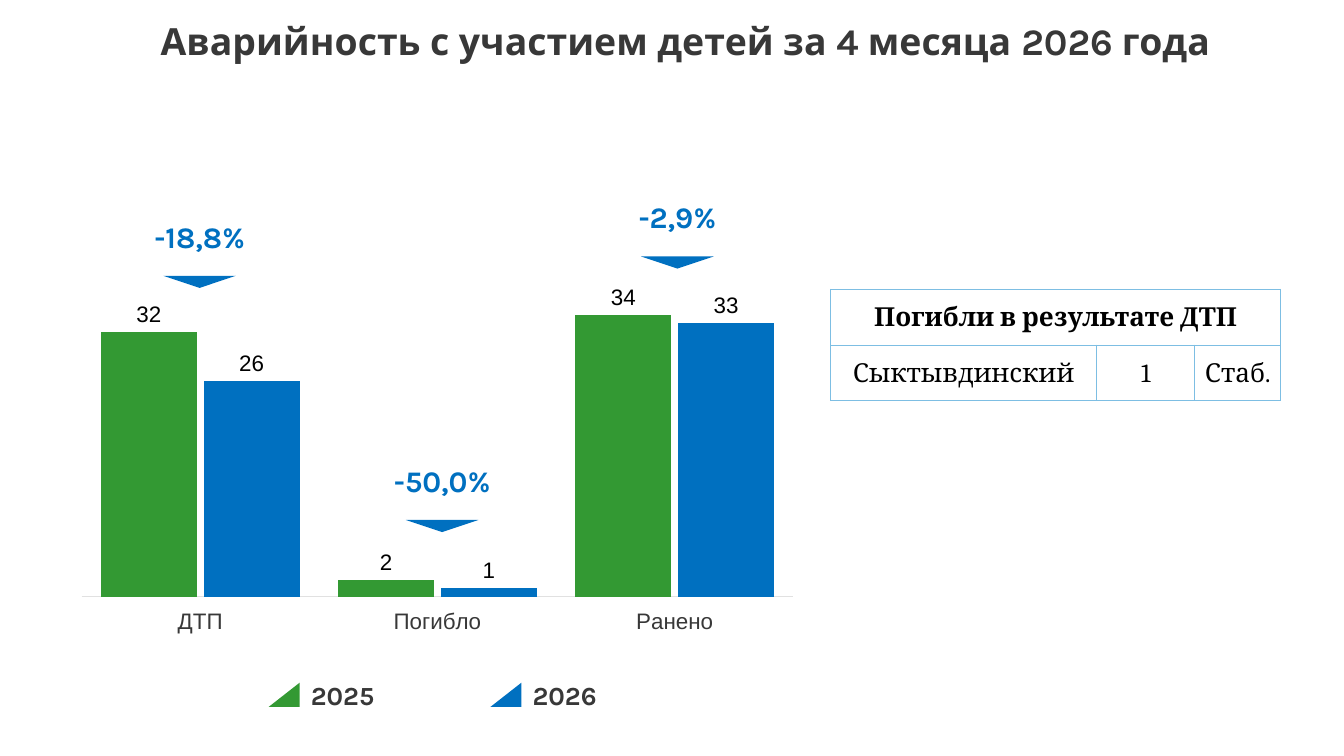
from pptx import Presentation
from pptx.chart.data import CategoryChartData
from pptx.dml.color import RGBColor
from pptx.enum.chart import XL_CHART_TYPE, XL_LABEL_POSITION, XL_TICK_LABEL_POSITION, XL_TICK_MARK
from pptx.enum.shapes import MSO_SHAPE
from pptx.enum.text import MSO_ANCHOR, PP_ALIGN
from pptx.oxml import parse_xml
from pptx.oxml.ns import nsdecls, qn
from pptx.util import Inches, Pt

WIDTH = Inches(10)
HEIGHT = WIDTH * 9 // 16
DARK = RGBColor(0x38, 0x38, 0x38)
GREEN = RGBColor(0x33, 0x99, 0x33)
BLUE = RGBColor(0x00, 0x70, 0xC0)
BLACK = RGBColor(0, 0, 0)
WHITE = RGBColor(0xFF, 0xFF, 0xFF)
AXIS_GREY = RGBColor(0xE1, 0xE1, 0xE1)
BORDER_BLUE = RGBColor(0x7D, 0xBE, 0xE3)

TITLE_FONT = {"name": "Karla", "size": Pt(20), "bold": True}
LEGEND_FONT = {"name": "Karla", "size": Pt(14), "bold": True}
CHANGE_FONT = {"name": "Karla", "size": Pt(16), "bold": True}
TABLE_FONT = {"name": "Cambria", "size": Pt(14)}
CHART_FONT = {"name": "Arial", "size": Pt(12)}

CATEGORIES = ["ДТП", "Погибло", "Ранено"]
SERIES = [("Series 1", (32, 2, 34), GREEN), ("Series 2", (26, 1, 33), BLUE)]
PLOT = {"x": 0.075, "y": 0.08, "w": 0.85, "h": 0.773}
LEGEND = [("2025", 20, GREEN), ("2026", 36.5, BLUE)]
CHANGES = [("-18,8%", 6.95, 27.08), ("-50,0%", 25, 59.38), ("-2,9%", 42.5, 24.53)]
COLUMN_SHARES = [19.8, 7.3, 6.4]
ROW_SHARE = 7.38
TABLE_ROWS = [["Погибли в результате ДТП"], ["Сыктывдинский", "1", "Стаб."]]


def across(share):
    return round(WIDTH * share / 100)


def down(share):
    return round(HEIGHT * share / 100)


def area(left, top, width, height):
    return across(left), down(top), across(width), down(height)


def apply_format(target, values):
    for name, value in values.items():
        setattr(target, name, value)


def style_font(font, values, color):
    apply_format(font, values)
    font.color.rgb = color


def write(frame, text, font, color, align):
    para = frame.paragraphs[0]
    para.alignment = align
    span = para.add_run()
    span.text = text
    style_font(span.font, font, color)


def add_label(page, place, text, font, color, align=PP_ALIGN.CENTER, anchor=MSO_ANCHOR.MIDDLE):
    frame = page.shapes.add_textbox(*area(*place)).text_frame
    margins = dict.fromkeys(("margin_left", "margin_top", "margin_right", "margin_bottom"), Inches(0.1))
    apply_format(frame, {"word_wrap": True, "vertical_anchor": anchor, **margins})
    write(frame, text, font, color, align)


def add_marker(page, kind, place, color):
    marker = page.shapes.add_shape(kind, *area(*place))
    marker.shadow.inherit = False
    marker.fill.solid()
    marker.fill.fore_color.rgb = color
    marker.line.fill.background()
    return marker


def add_legend_item(page, text, left, color):
    marker = add_marker(page, MSO_SHAPE.RIGHT_TRIANGLE, (left, 90.31, 2.3, 3.2), color)
    marker.element.spPr.xfrm.set("flipH", "1")
    add_label(page, (left + 2.15, 88.09, 20, 5.69), text, LEGEND_FONT, DARK,
              PP_ALIGN.LEFT, MSO_ANCHOR.TOP)


def add_change(page, text, left, top):
    add_label(page, (left, top, 15.8, 8.36), text, CHANGE_FONT, BLUE)
    arrow = add_marker(page, MSO_SHAPE.ISOSCELES_TRIANGLE, (left + 5.2, top + 9.4, 5.4, 1.6), BLUE)
    arrow.rotation = 180


def fix_plot_area(chart):
    sizes = "".join(f'<c:{key} val="{value}"/>' for key, value in PLOT.items())
    layout = parse_xml(
        f'<c:layout {nsdecls("c")}><c:manualLayout><c:layoutTarget val="inner"/>'
        f'<c:xMode val="edge"/><c:yMode val="edge"/>{sizes}</c:manualLayout></c:layout>')
    plot_area = chart.element.chart.plotArea
    for old in plot_area.findall(layout.tag):
        plot_area.remove(old)
    plot_area.insert(0, layout)
    for offset in plot_area.iter(qn("c:lblOffset")):
        offset.set("val", "0")


def add_accident_chart(page):
    data = CategoryChartData()
    data.categories = CATEGORIES
    for name, values, _ in SERIES:
        data.add_series(name, values)
    chart = page.shapes.add_chart(
        XL_CHART_TYPE.COLUMN_CLUSTERED, *area(1.4, 30.58, 62.3, 56.71), data).chart
    apply_format(chart, {"has_legend": False, "has_title": False})
    style_font(chart.font, CHART_FONT, DARK)
    fix_plot_area(chart)

    apply_format(chart.value_axis, {"visible": False, "has_major_gridlines": False,
                                    "minimum_scale": 0, "maximum_scale": 40})
    axis = chart.category_axis
    apply_format(axis, {"major_tick_mark": XL_TICK_MARK.NONE, "minor_tick_mark": XL_TICK_MARK.NONE,
                        "tick_label_position": XL_TICK_LABEL_POSITION.LOW})
    style_font(axis.tick_labels.font, CHART_FONT, DARK)
    axis.format.line.color.rgb = AXIS_GREY
    axis.format.line.width = Pt(0.75)

    plot = chart.plots[0]
    apply_format(plot, {"gap_width": 40, "overlap": -7, "vary_by_categories": False})
    for series, (_, _, color) in zip(plot.series, SERIES):
        series.format.fill.solid()
        series.format.fill.fore_color.rgb = color
        apply_format(series.data_labels, {"show_value": True, "position": XL_LABEL_POSITION.OUTSIDE_END})
        style_font(series.data_labels.font, CHART_FONT, BLACK)


def style_cell(cell):
    properties = cell._tc.get_or_add_tcPr()
    for side in ("lnL", "lnR", "lnT", "lnB"):
        properties.append(parse_xml(
            f'<a:{side} {nsdecls("a")} w="{Pt(0.5)}"><a:solidFill>'
            f'<a:srgbClr val="{BORDER_BLUE}"/></a:solidFill></a:{side}>'))
    edge = Inches(0.01)
    apply_format(cell, {"margin_left": edge, "margin_right": edge, "margin_top": edge,
                        "margin_bottom": 0, "vertical_anchor": MSO_ANCHOR.MIDDLE})
    cell.fill.solid()
    cell.fill.fore_color.rgb = WHITE


def add_fatality_table(page):
    place = area(61.8, 38.27, sum(COLUMN_SHARES), ROW_SHARE * len(TABLE_ROWS))
    table = page.shapes.add_table(len(TABLE_ROWS), len(COLUMN_SHARES), *place).table
    apply_format(table, {"first_row": False, "horz_banding": False})
    for column, share in zip(table.columns, COLUMN_SHARES):
        column.width = across(share)
    for cell in table.iter_cells():
        style_cell(cell)
    table.cell(0, 0).merge(table.cell(0, len(COLUMN_SHARES) - 1))
    for row, texts in enumerate(TABLE_ROWS):
        for column, text in enumerate(texts):
            write(table.cell(row, column).text_frame, text,
                  {**TABLE_FONT, "bold": row == 0}, BLACK, PP_ALIGN.CENTER)


def main():
    deck = Presentation()
    apply_format(deck, {"slide_width": WIDTH, "slide_height": HEIGHT})
    page = deck.slides.add_slide(deck.slide_layouts[6])
    add_accident_chart(page)
    add_label(page, (1, 0.6, 100, 10.31), "Аварийность с участием детей за 4 месяца 2026 года",
              TITLE_FONT, DARK, anchor=MSO_ANCHOR.TOP)
    for item in LEGEND:
        add_legend_item(page, *item)
    add_fatality_table(page)
    for change in CHANGES:
        add_change(page, *change)
    deck.save("out.pptx")


if __name__ == "__main__":
    main()
